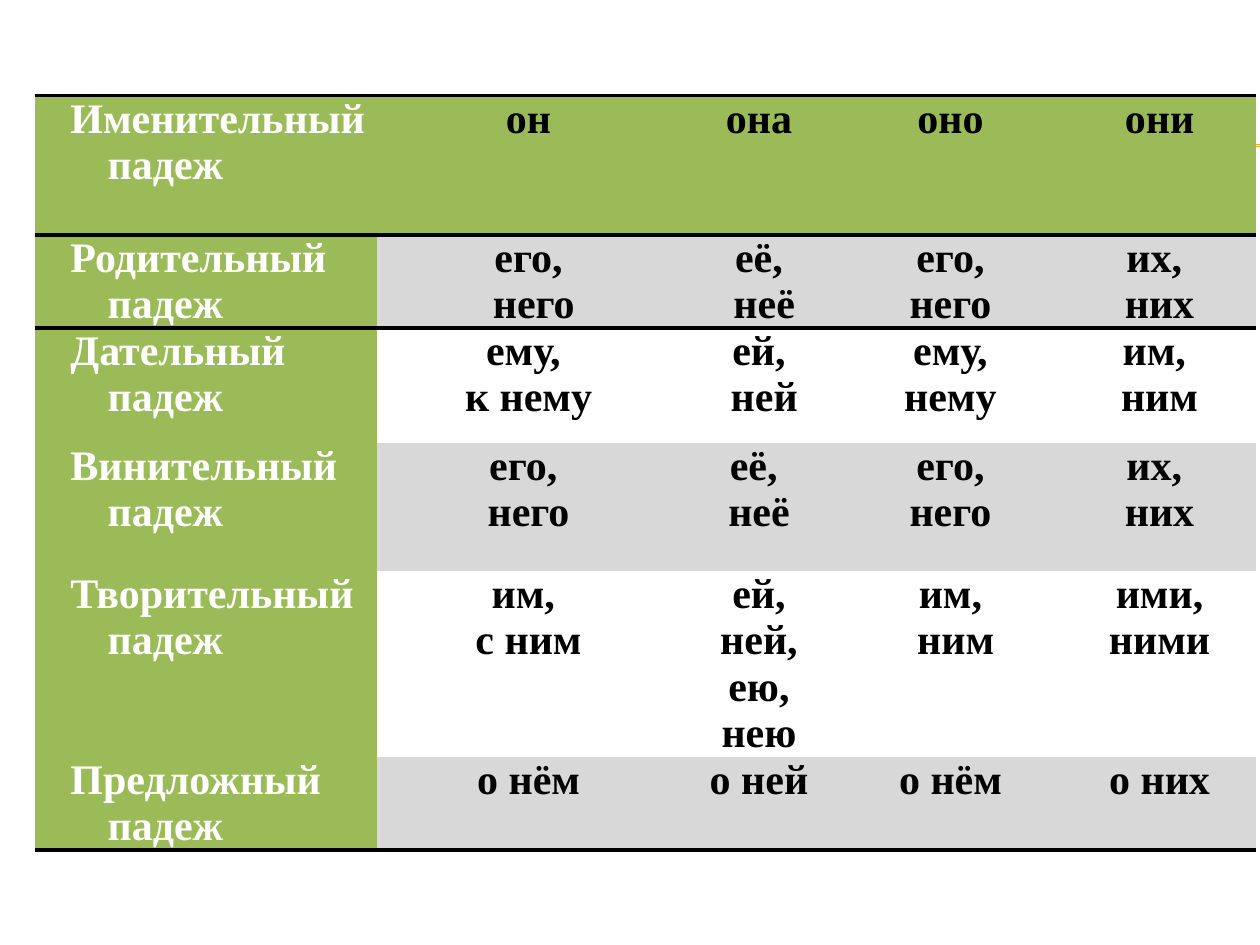
from typing import NamedTuple

from lxml.etree import SubElement
from pptx import Presentation
from pptx.dml.color import RGBColor
from pptx.enum.shapes import MSO_CONNECTOR as Link
from pptx.enum.text import PP_ALIGN as Align
from pptx.oxml import parse_xml
from pptx.oxml.ns import nsdecls, qn
from pptx.util import Cm, Pt

GREEN = RGBColor(0x9B, 0xBB, 0x59)
GRAY = RGBColor(0xD8, 0xD8, 0xD8)
WHITE = RGBColor(0xFF, 0xFF, 0xFF)
BLACK = RGBColor(0x00, 0x00, 0x00)
GOLD = RGBColor(0xF0, 0xA2, 0x2E)

PLAIN = "{2D5ABB26-0587-4C30-8999-92F81FD0307C}"  # table style without grid
FONT = {"name": "Times New Roman", "size": Pt(24), "bold": True}
INSET = {"margin_left": Cm(0.19), "margin_right": Cm(0.19),
         "margin_top": 0, "margin_bottom": 0}
WIDTHS = (6.88, 5.61, 3.68, 4.04, 4.39)


class Case(NamedTuple):
    name: str
    height: float
    forms: tuple[str, ...]  # a line break starts a new paragraph


CASES = (
    Case("Именительный", 2.81, ("он", "она", "оно", "они")),
    Case("Родительный", 1.87, ("его,\n него", "её,\n неё", "его,\nнего", "их, \nних")),
    Case("Дательный", 2.32, ("ему, \nк нему", "ей,\n ней", "ему,\nнему", "им, \nним")),
    Case("Винительный", 2.58, ("его, \nнего", "её, \nнеё", "его,\nнего", "их, \nних")),
    Case("Творительный", 3.73, ("им, \nс ним", "ей,\nней,\nею,\nнею", "им,\n ним", "ими,\nними")),
    Case("Предложный", 1.88, ("о нём", "о ней", "о нём", "о них")),
)


def rule(slide, top: float) -> None:
    line = slide.shapes.add_connector(Link.STRAIGHT, Cm(1.42), Cm(top), Cm(25.4), Cm(top))
    line.line.color.rgb = GOLD
    line.line.width = Pt(0.75)
    SubElement(line._element.spPr, qn("a:effectLst"))


def write(cell, text: str, align: Align, color: RGBColor) -> None:
    for key, value in INSET.items():
        setattr(cell, key, value)
    cell.text = text
    for para in cell.text_frame.paragraphs:
        para.alignment = align
        # Hanging indent
        props = para._p.get_or_add_pPr()
        props.set("marL", str(Cm(1.27)))
        props.set("indent", str(-Cm(0.75)))
        font = para.runs[0].font
        for key, value in FONT.items():
            setattr(font, key, value)
        font.color.rgb = color


def edge(cell, sides: list[str]) -> None:
    props = cell._tc.get_or_add_tcPr()
    for spot, side in enumerate(sides):
        props.insert(spot, parse_xml(
            f'<a:{side} {nsdecls("a")} w="{Pt(2.25)}"><a:solidFill>'
            f'<a:srgbClr val="{BLACK}"/></a:solidFill></a:{side}>'))


def build(slide) -> None:
    last = len(CASES) - 1
    height = sum(case.height for case in CASES)
    frame = slide.shapes.add_table(len(CASES), len(WIDTHS), Cm(0.71), Cm(1.93),
                                   Cm(sum(WIDTHS)), Cm(height))
    table = frame.table
    table._tbl.tblPr.find(qn("a:tableStyleId")).text = PLAIN
    for col, width in zip(table.columns, WIDTHS):
        col.width = Cm(width)

    for i, case in enumerate(CASES):
        table.rows[i].height = Cm(case.height)
        # Black rules around the header row and under the last row
        sides = (["a:lnT"] if i <= 1 else []) + (["a:lnB"] if i in (0, last) else [])
        for j, text in enumerate((f"{case.name} падеж", *case.forms)):
            cell = table.cell(i, j)
            if j == 0:
                write(cell, text, Align.JUSTIFY, WHITE)
            else:
                write(cell, text, Align.CENTER, BLACK)
            # Green header row and column, gray odd rows
            if i == 0 or j == 0:
                cell.fill.solid()
                cell.fill.fore_color.rgb = GREEN
            elif i % 2:
                cell.fill.solid()
                cell.fill.fore_color.rgb = GRAY
            else:
                cell.fill.background()
            edge(cell, [side[2:] for side in sides])


def main() -> None:
    deck = Presentation()
    deck.slide_width, deck.slide_height = Cm(25.4), Cm(19.05)
    slide = deck.slides.add_slide(deck.slide_layouts[6])
    # Double gold rule behind the table
    for top in (2.92, 2.95):
        rule(slide, top)
    build(slide)
    deck.save("out.pptx")


if __name__ == "__main__":
    main()
